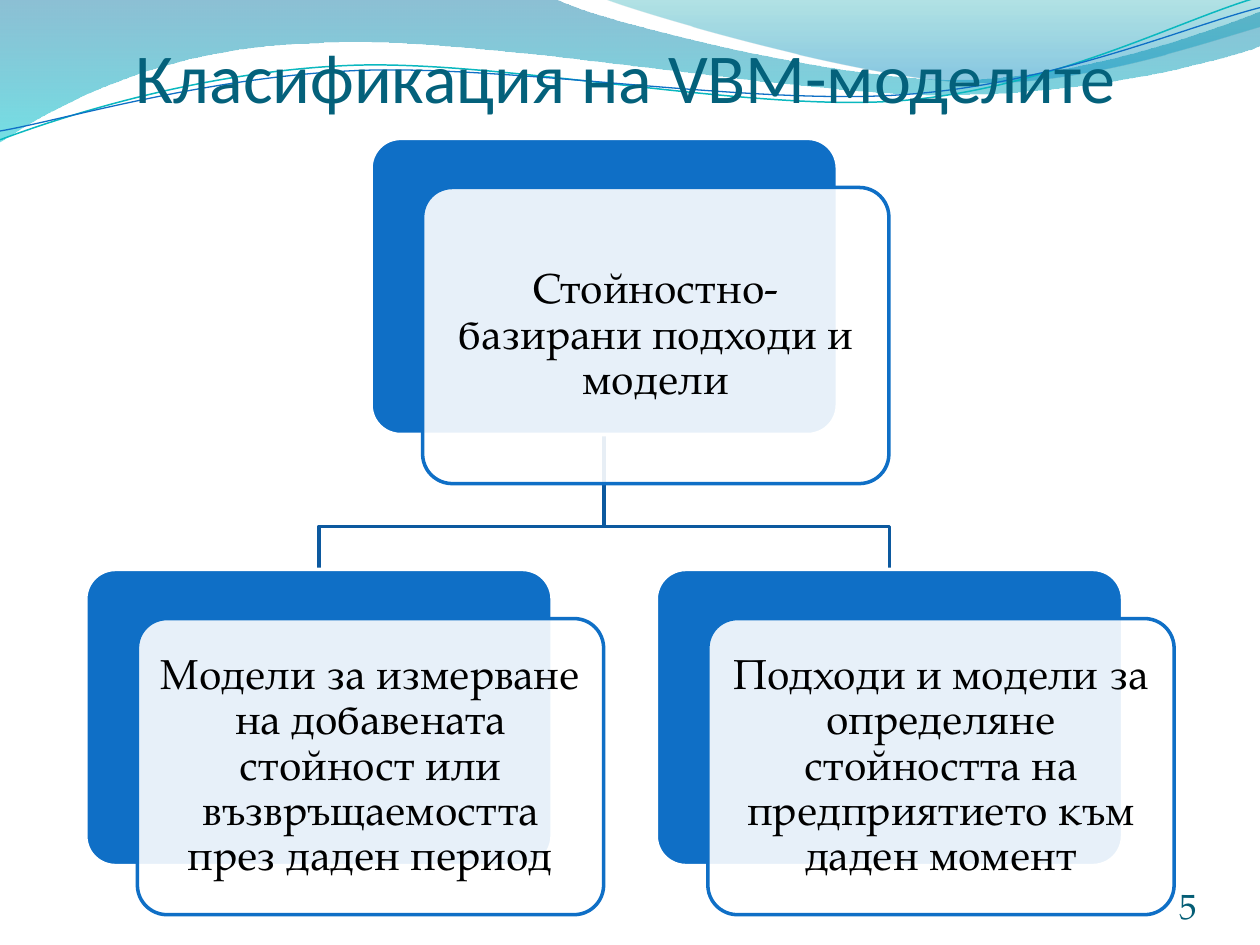
from math import cos, radians, sin

from lxml.etree import SubElement
from pptx import Presentation
from pptx.dml.color import RGBColor
from pptx.enum.shapes import MSO_SHAPE as Kind
from pptx.enum.text import MSO_ANCHOR as Anchor, PP_ALIGN as Align
from pptx.oxml.ns import qn
from pptx.util import Cm, Pt


def paint(code):
    return RGBColor.from_string(code)


def fade(shape, *rates):
    tints = shape.element.spPr.iter(qn("a:srgbClr"))
    for tint, rate in zip(list(tints), rates):
        SubElement(tint, qn("a:alpha")).set("val", str(rate * 1000))


def write(frame, text, font, size, color, align=Align.CENTER,
          anchor=Anchor.MIDDLE, pad=(0, 0, 0, 0), lead=1.0):
    frame.word_wrap = True
    frame.vertical_anchor = anchor
    frame.margin_left, frame.margin_top = Cm(pad[0]), Cm(pad[1])
    frame.margin_right, frame.margin_bottom = Cm(pad[2]), Cm(pad[3])
    para = frame.paragraphs[0]
    para.alignment = align
    para.line_spacing = lead
    run = para.add_run()
    run.text = text
    run.font.name = font
    run.font.size = Pt(size)
    run.font.color.rgb = paint(color)


def pairs(step):
    return list(zip(step[::2], step[1::2]))


def turn(steps, angle, x, y):
    c, s = cos(radians(angle)), sin(radians(angle))
    return [[v for a, b in pairs(step)
             for v in (x + c * (a - x) - s * (b - y),
                       y + s * (a - x) + c * (b - y))]
            for step in steps]


def bend(shape, steps):
    track = next(shape.element.iter(qn("a:path")))
    lines = iter(track.findall(qn("a:lnTo")))
    for step in steps:
        group = [next(lines) for _ in pairs(step)]
        if len(group) == 3:
            curve = SubElement(track, qn("a:cubicBezTo"))
            group[0].addprevious(curve)
            for line in group:
                curve.append(line[0])
                track.remove(line)


class Deck:
    head = "Calibri"
    body = "TeX Gyre Pagella"
    blue = "0F6FC6"
    width, height = 9.4, 5.97
    shift = (1.04, 0.99)
    tilt = 2.7
    grain = 1000

    def __init__(self):
        self.file = Presentation()
        self.file.slide_width, self.file.slide_height = Cm(25.4), Cm(19.05)
        self.slide = self.file.slides.add_slide(self.file.slide_layouts[5])
        self.shapes = self.slide.shapes

    def draw(self, steps, unit=1.0, close=False):
        dots = [(x * self.grain, y * self.grain)
                for step in steps for x, y in pairs(step)]
        pen = self.shapes.build_freeform(*dots[0],
                                         scale=Cm(unit) / self.grain)
        pen.add_line_segments(dots[1:], close=close)
        shape = pen.convert_to_shape()
        shape.shadow.inherit = False
        bend(shape, steps[1:])
        return shape

    def wave(self, steps, stops, rates):
        shape = self.draw(steps, 2.54, True)
        shape.line.fill.background()
        shape.fill.gradient()
        shape.fill.gradient_angle = 270
        for stop, (place, color) in zip(shape.fill.gradient_stops, stops):
            stop.position = place
            stop.color.rgb = paint(color)
        fade(shape, *rates)

    def line(self, steps, color, weight, unit=1.0):
        shape = self.draw(steps, unit)
        shape.fill.background()
        shape.line.color.rgb = paint(color)
        shape.line.width = Pt(weight)
        return shape

    def strand(self, steps, color, weight, y):
        flat = turn(steps, self.tilt, 4.99, y)
        shape = self.line(flat, color, weight, 2.54)
        shape.rotation = 360 - self.tilt

    def title(self, text):
        title = self.shapes.title
        self.shapes.element.append(title.element)
        title.left, title.top = Cm(1.19), Cm(0.58)
        title.width, title.height = Cm(22.86), Cm(1.78)
        write(title.text_frame, text, self.head, 40, "04617B",
              anchor=Anchor.BOTTOM, pad=(0, 0.13, 0, 0))

    def plate(self, x, y, fill, edge):
        shape = self.shapes.add_shape(
            Kind.ROUNDED_RECTANGLE, Cm(x), Cm(y),
            Cm(self.width), Cm(self.height))
        shape.adjustments[0] = 0.1
        shape.shadow.inherit = False
        shape.fill.solid()
        shape.fill.fore_color.rgb = paint(fill)
        shape.line.color.rgb = paint(edge)
        shape.line.width = Pt(2)
        return shape

    def card(self, x, y, text):
        self.plate(x, y, self.blue, "FFFFFF")
        front = self.plate(x + self.shift[0], y + self.shift[1],
                           "FFFFFF", self.blue)
        fade(front, 90)
        write(front.text_frame, text, self.body, 24, "000000",
              pad=(0.25,) * 4, lead=0.9)

    def link(self, top, low):
        mid = self.width / 2
        start, end = top[1] + self.height, low[1]
        turn_y = start + 0.68 * (end - start)
        x, z = top[0] + mid, low[0] + mid
        self.line([(x, start), (x, turn_y), (z, turn_y), (z, end)],
                  "0C599F", 2)

    def number(self, text):
        box = self.shapes.add_textbox(Cm(22.02), Cm(17.65), Cm(2.11), Cm(1.02))
        write(box.text_frame, text, self.body, 20, "045D75",
              align=Align.RIGHT, anchor=Anchor.BOTTOM)


def main():
    deck = Deck()

    deck.wave([(0, 0), (4.4, -0.01),
               (4.76, 0.17, 6.64, 0.63, 7.58, 0.63),
               (8.53, 0.63, 9.58, 0.26, 10, 0.09),
               (10.01, 0.36),
               (9.83, 0.44, 8.7, 0.76, 7.46, 0.75),
               (6.22, 0.75, 3.82, 0.28, 2.57, 0.34),
               (1.29, 0.36, 0.46, 0.83, -0.01, 1.13)],
              [(0, "0074A1"), (1, "00C6CF")], (45, 55))
    deck.wave([(4.79, -0.01),
               (5.09, 0.11, 6.82, 0.62, 7.69, 0.65),
               (8.56, 0.69, 9.61, 0.32, 10, 0.21),
               (10, 0)],
              [(0, "00A1A9"), (0.8, "008BBF")], (30, 45))
    deck.strand([(0, 1.11),
                 (0.48, 0.93, 1.58, 0.57, 2.77, 0.52),
                 (3.95, 0.47, 5.93, 0.89, 7.13, 0.8),
                 (8.33, 0.71, 9.38, 0.15, 9.98, -0.02)],
                "0AB8BF", 0.85, 0.58)
    deck.strand([(0, 1.04),
                 (0.47, 0.96, 1.64, 0.61, 2.83, 0.56),
                 (4.03, 0.51, 5.97, 0.84, 7.17, 0.75),
                 (8.36, 0.67, 9.41, 0.21, 10, 0.06)],
                deck.blue, 0.75, 0.59)

    deck.title("Класификация на VBM-моделите")

    left, step = 1.73, 5.75
    root = (left + step, 2.79)
    leaves = [(left + 2 * step * i, 11.48) for i in range(2)]
    for leaf in reversed(leaves):
        deck.link(root, leaf)
    texts = [
        "Стойностно-базирани подходи и модели",
        "Модели за измерване на добавената стойност или "
        "възвръщаемостта през даден период",
        "Подходи и модели за определяне стойността на "
        "предприятието към даден момент",
    ]
    for spot, text in zip([root] + leaves, texts):
        deck.card(*spot, text)

    deck.number("5")
    deck.file.save("out.pptx")


if __name__ == "__main__":
    main()
